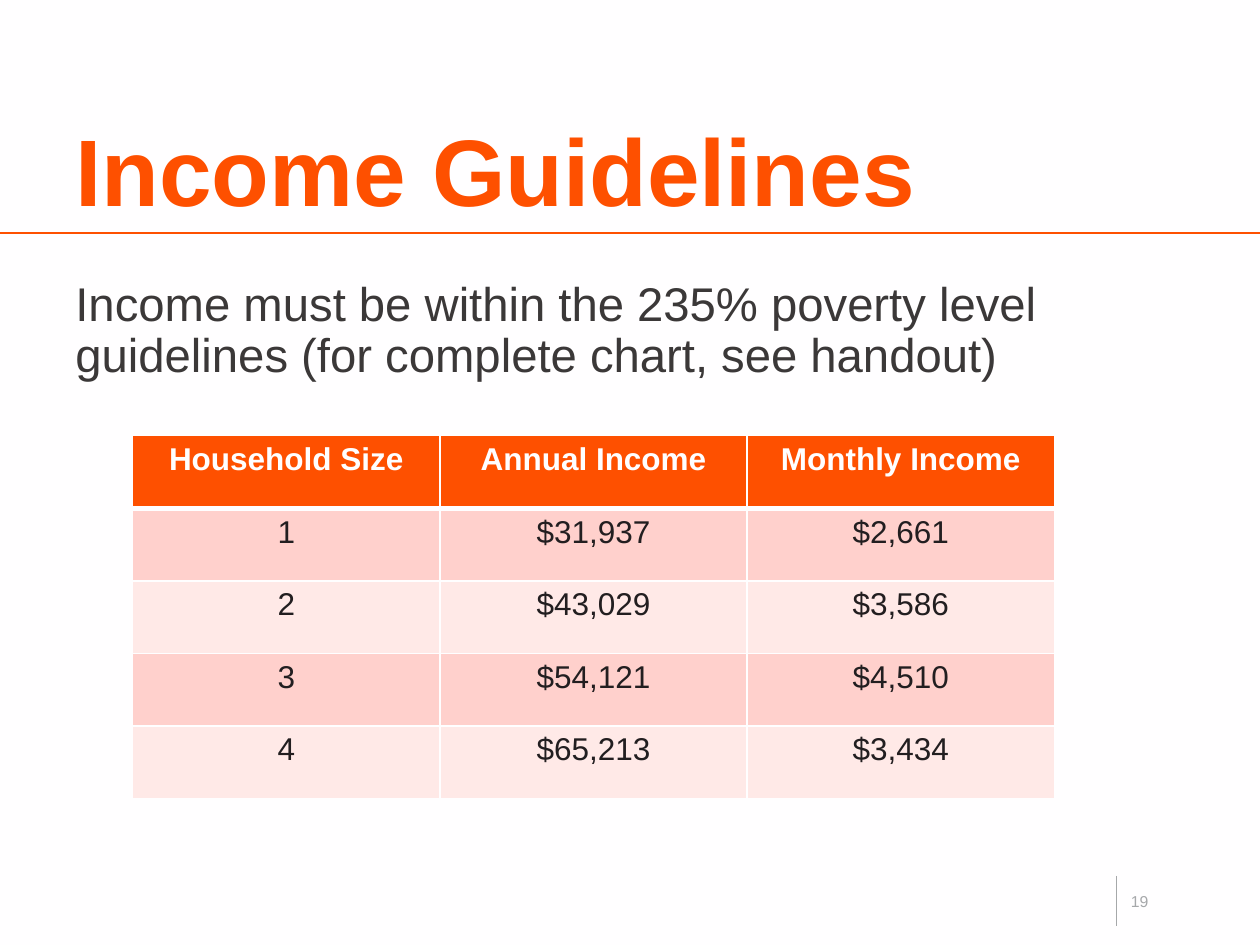
from lxml import etree
from pptx import Presentation
from pptx import util as u
from pptx.dml.color import RGBColor
from pptx.enum import shapes, text
from pptx.oxml.ns import qn

Pt = u.Pt
ORANGE = RGBColor(0xFE, 0x50, 0x00)
WHITE = RGBColor(0xFF, 0xFE, 0xFF)
GRAY = RGBColor(0xA6, 0xA8, 0xAA)
DARK = RGBColor(0x3B, 0x38, 0x38)
BLACK = RGBColor(0x22, 0x1E, 0x20)
PINK = RGBColor(0xFF, 0xD0, 0xCC)
PALE = RGBColor(0xFF, 0xE9, 0xE7)


def write(tf, words, color, para, **font):
    p = tf.paragraphs[0]
    for name, value in para.items():
        setattr(p, name, value)
    r = p.add_run()
    r.text = words
    r.font.color.rgb = color
    for name, value in {"name": "Arial", **font}.items():
        setattr(r.font, name, value)


def add_border(tc_pr, index, side, width):
    ln = etree.Element(qn("a:" + side), w=str(Pt(width)))
    fill = etree.SubElement(ln, qn("a:solidFill"))
    etree.SubElement(fill, qn("a:srgbClr"), val=str(WHITE))
    tc_pr.insert(index, ln)


prs = Presentation()
prs.slide_width, prs.slide_height = Pt(720), Pt(540)
s = prs.slides.add_slide(prs.slide_layouts[6])
s.background.fill.solid()
s.background.fill.fore_color.rgb = WHITE

for ends, color, width in [
    ((638, 500.5, 638, 529), GRAY, 0.5),
    ((722, 133.2, -2, 133.2), ORANGE, 1),
]:
    line = s.shapes.add_connector(shapes.MSO_CONNECTOR.STRAIGHT, *map(Pt, ends))
    line.line.color.rgb = color
    line.line.width = Pt(width)
    etree.SubElement(line._element.spPr, qn("a:effectLst"))

CENTER = {"alignment": text.PP_ALIGN.CENTER}
TIGHT = {"line_spacing": 0.9}
for box, anchor, words, color, para, font in [
    ((36, 28.8, 646.5, 104.4), text.MSO_ANCHOR.BOTTOM, "Income Guidelines",
     ORANGE, TIGHT, {"size": Pt(54), "bold": True}),
    ((638, 500.5, 26.6, 28.5), text.MSO_ANCHOR.MIDDLE, "19",
     GRAY, CENTER, {"size": Pt(9)}),
    ((36, 157, 646.5, 319.7), text.MSO_ANCHOR.TOP,
     "Income must be within the 235% poverty level guidelines "
     "(for complete chart, see handout)",
     DARK, {**TIGHT, "space_after": Pt(4.5)}, {"size": Pt(27)}),
]:
    tf = s.shapes.add_textbox(*map(Pt, box)).text_frame
    tf.word_wrap = True
    tf.vertical_anchor = anchor
    write(tf, words, color, para, **font)

rows = [
    ("Household Size", "Annual Income", "Monthly Income"),
    ("1", "$31,937", "$2,661"),
    ("2", "$43,029", "$3,586"),
    ("3", "$54,121", "$4,510"),
    ("4", "$65,213", "$3,434"),
]
table = s.shapes.add_table(
    len(rows), 3, Pt(75.8), Pt(249), Pt(526.8), Pt(207.25)).table
for col in table.columns:
    col.width = Pt(175.6)
for i, row in enumerate(rows):
    table.rows[i].height = Pt(41.45)
    for j, words in enumerate(row):
        cell = table.cell(i, j)
        cell.fill.solid()
        cell.fill.fore_color.rgb = ORANGE if i == 0 else PINK if i % 2 else PALE
        write(cell.text_frame, words, BLACK if i else WHITE, CENTER,
              size=Pt(18), bold=i == 0)
        widths = {"lnL": 1, "lnR": 1, "lnT": 3 if i == 1 else 1, "lnB": 1 if i else 3}
        for k, (side, width) in enumerate(widths.items()):
            add_border(cell._tc.get_or_add_tcPr(), k, side, width)

prs.save("out.pptx")
